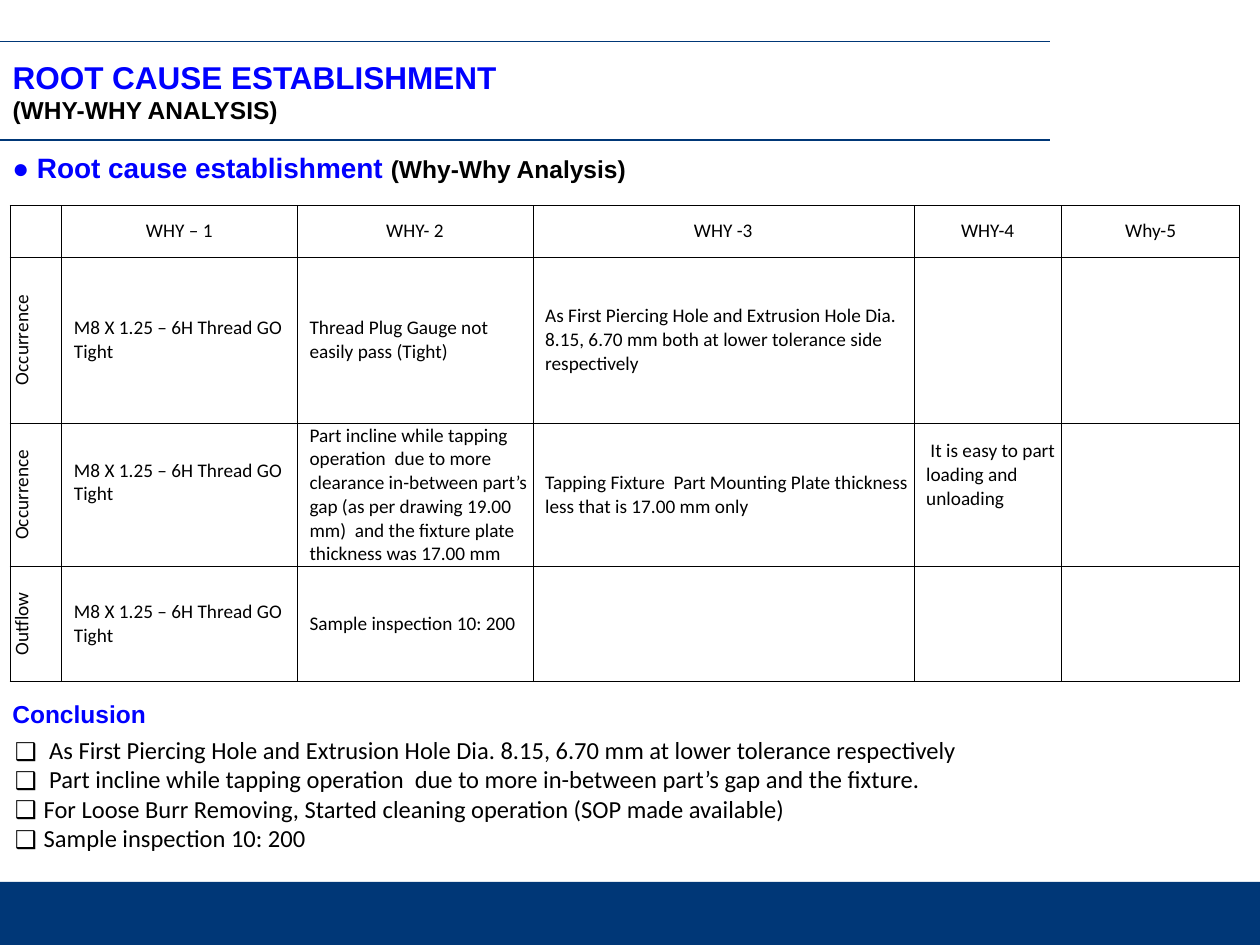
from lxml import etree
from pptx import Presentation
from pptx.dml.color import RGBColor
from pptx.enum.shapes import MSO_CONNECTOR, MSO_SHAPE
from pptx.enum.text import MSO_ANCHOR, MSO_AUTO_SIZE, PP_ALIGN
from pptx.oxml.ns import qn
from pptx.util import Cm, Pt

STRAIGHT = MSO_CONNECTOR.STRAIGHT
RECTANGLE = MSO_SHAPE.RECTANGLE
TOP, MIDDLE = MSO_ANCHOR.TOP, MSO_ANCHOR.MIDDLE
LEFT, CENTER = PP_ALIGN.LEFT, PP_ALIGN.CENTER
NO_AUTOFIT = MSO_AUTO_SIZE.NONE

NAVY = RGBColor(0x00, 0x37, 0x77)
BLUE = RGBColor(0x00, 0x00, 0xFF)
BLACK = RGBColor(0x00, 0x00, 0x00)
WHITE = RGBColor(0xFF, 0xFF, 0xFF)

HEADING_FONT = "Arial"
BODY_FONT = "Calibri"
BULLET_FONT = "Noto Sans CJK JP"

COLUMN_WIDTHS = [1.04, 4.75, 4.75, 7.68, 2.98, 3.59]
ROW_HEIGHTS = [1.04, 3.35, 2.89, 2.32]
SYMPTOM = "M8 X 1.25 – 6H Thread GO Tight"
WHY_ROWS = [
    ["", "WHY – 1", "WHY- 2", "WHY -3", "WHY-4", "Why-5"],
    ["Occurrence", SYMPTOM, "Thread Plug Gauge not easily pass (Tight)",
     "As First Piercing Hole and Extrusion Hole Dia. 8.15, 6.70 mm both at "
     "lower tolerance side respectively", "", ""],
    ["Occurrence", SYMPTOM,
     "Part incline while tapping operation  due to more clearance in-between "
     "part’s gap (as per drawing 19.00 mm)  and the fixture plate thickness "
     "was 17.00 mm",
     "Tapping Fixture  Part Mounting Plate thickness less that is 17.00 mm only",
     " It is easy to part loading and unloading", ""],
    ["Outflow", SYMPTOM, "Sample inspection 10: 200", "", "", ""],
]
RAISED_CELLS = {(2, 1): 0.5, (2, 4): 0.8}
CONCLUSIONS = [
    " As First Piercing Hole and Extrusion Hole Dia. 8.15, 6.70 mm at lower "
    "tolerance respectively",
    " Part incline while tapping operation  due to more in-between part’s gap "
    "and the fixture.",
    "For Loose Burr Removing, Started cleaning operation (SOP made available)",
    "Sample inspection 10: 200",
]


def place(shape, left, top, width, height):
    shape.left, shape.top = Cm(left), Cm(top)
    shape.width, shape.height = Cm(width), Cm(height)


def add_run(paragraph, text, size, color=BLACK, font=BODY_FONT, bold=False):
    run = paragraph.add_run()
    run.text = text
    run.font.name = font
    run.font.size = Pt(size)
    run.font.bold = bold
    run.font.color.rgb = color


def add_rule(slide, top):
    rule = slide.shapes.add_connector(STRAIGHT, 0, Cm(top), Cm(21.16), Cm(top))
    rule.line.color.rgb = NAVY
    rule.line.width = Pt(0.75)
    etree.SubElement(rule._element.spPr, qn("a:effectLst"))


def add_footer_band(slide):
    band = slide.shapes.add_shape(RECTANGLE, 0, Cm(17.78), Cm(25.4), Cm(1.27))
    band.shadow.inherit = False
    band.fill.solid()
    band.fill.fore_color.rgb = NAVY
    band.line.fill.background()


def fill_title(title):
    place(title, 0, 0.95, 25.4, 1.78)
    frame = title.text_frame
    frame.auto_size = NO_AUTOFIT
    frame.vertical_anchor = MIDDLE
    paragraph = frame.paragraphs[0]
    paragraph.alignment = LEFT
    add_run(paragraph, "ROOT CAUSE ESTABLISHMENT ", 18, BLUE, HEADING_FONT, True)
    paragraph.add_line_break()
    add_run(paragraph, "(WHY-WHY ANALYSIS)", 14, BLACK, HEADING_FONT, True)


def add_heading(slide, top, width, runs):
    box = slide.shapes.add_textbox(0, Cm(top), Cm(width), Cm(0.86))
    box.text_frame.word_wrap = True
    for text, size, color in runs:
        add_run(box.text_frame.paragraphs[0], text, size, color, HEADING_FONT, True)


def add_cell_borders(cell):
    properties = cell._tc.get_or_add_tcPr()
    for side in ("lnL", "lnR", "lnT", "lnB"):
        line = etree.SubElement(properties, qn(f"a:{side}"), w=str(Pt(0.25)))
        fill = etree.SubElement(line, qn("a:solidFill"))
        etree.SubElement(fill, qn("a:srgbClr"), val=str(BLACK))


def fill_cell(cell, text, row, column):
    add_cell_borders(cell)
    cell.fill.solid()
    cell.fill.fore_color.rgb = WHITE
    is_label = row == 0 or column == 0
    cell.margin_left = Cm(0 if is_label else 0.25)
    cell.margin_right = cell.margin_top = 0
    cell.margin_bottom = Cm(RAISED_CELLS.get((row, column), 0))
    cell.vertical_anchor = MIDDLE
    if not text:
        return
    if column == 0:
        cell._tc.get_or_add_tcPr().set("vert", "vert270")
        cell.vertical_anchor = TOP
    paragraph = cell.text_frame.paragraphs[0]
    paragraph.alignment = CENTER if is_label else LEFT
    add_run(paragraph, text, 11)


def add_why_table(slide):
    frame = slide.shapes.add_table(
        len(ROW_HEIGHTS), len(COLUMN_WIDTHS), Cm(0.2), Cm(4.14),
        Cm(sum(COLUMN_WIDTHS)), Cm(sum(ROW_HEIGHTS)))
    table = frame.table
    for column, width in zip(table.columns, COLUMN_WIDTHS):
        column.width = Cm(width)
    for row, height in zip(table.rows, ROW_HEIGHTS):
        row.height = Cm(height)
    for row, texts in enumerate(WHY_ROWS):
        for column, text in enumerate(texts):
            fill_cell(table.cell(row, column), text, row, column)


def add_bullet(paragraph):
    properties = paragraph._p.get_or_add_pPr()
    properties.set("marL", str(Cm(0.58)))
    properties.set("indent", str(-Cm(0.58)))
    etree.SubElement(properties, qn("a:buFont"), typeface=BULLET_FONT)
    etree.SubElement(properties, qn("a:buChar"), char="❑")


def fill_conclusions(body):
    place(body, 0.3, 14.81, 25.1, 2.74)
    frame = body.text_frame
    frame.auto_size = NO_AUTOFIT
    frame.vertical_anchor = TOP
    frame.margin_left = frame.margin_right = 0
    frame.margin_top = frame.margin_bottom = 0
    for index, text in enumerate(CONCLUSIONS):
        paragraph = frame.add_paragraph() if index else frame.paragraphs[0]
        add_bullet(paragraph)
        paragraph.space_before = Pt(0)
        add_run(paragraph, text, 14)


def main():
    presentation = Presentation()
    presentation.slide_width, presentation.slide_height = Cm(25.4), Cm(19.05)
    slide = presentation.slides.add_slide(presentation.slide_layouts[1])
    add_footer_band(slide)
    for top in (0.84, 2.82):
        add_rule(slide, top)
    fill_title(slide.shapes.title)
    add_heading(slide, 2.92, 19.25, [
        ("● Root cause establishment ", 16, BLUE),
        ("(Why-Why Analysis)", 14, BLACK),
    ])
    add_why_table(slide)
    add_heading(slide, 13.97, 5.72, [("Conclusion", 14, BLUE)])
    fill_conclusions(slide.placeholders[1])
    presentation.save("out.pptx")


if __name__ == "__main__":
    main()
